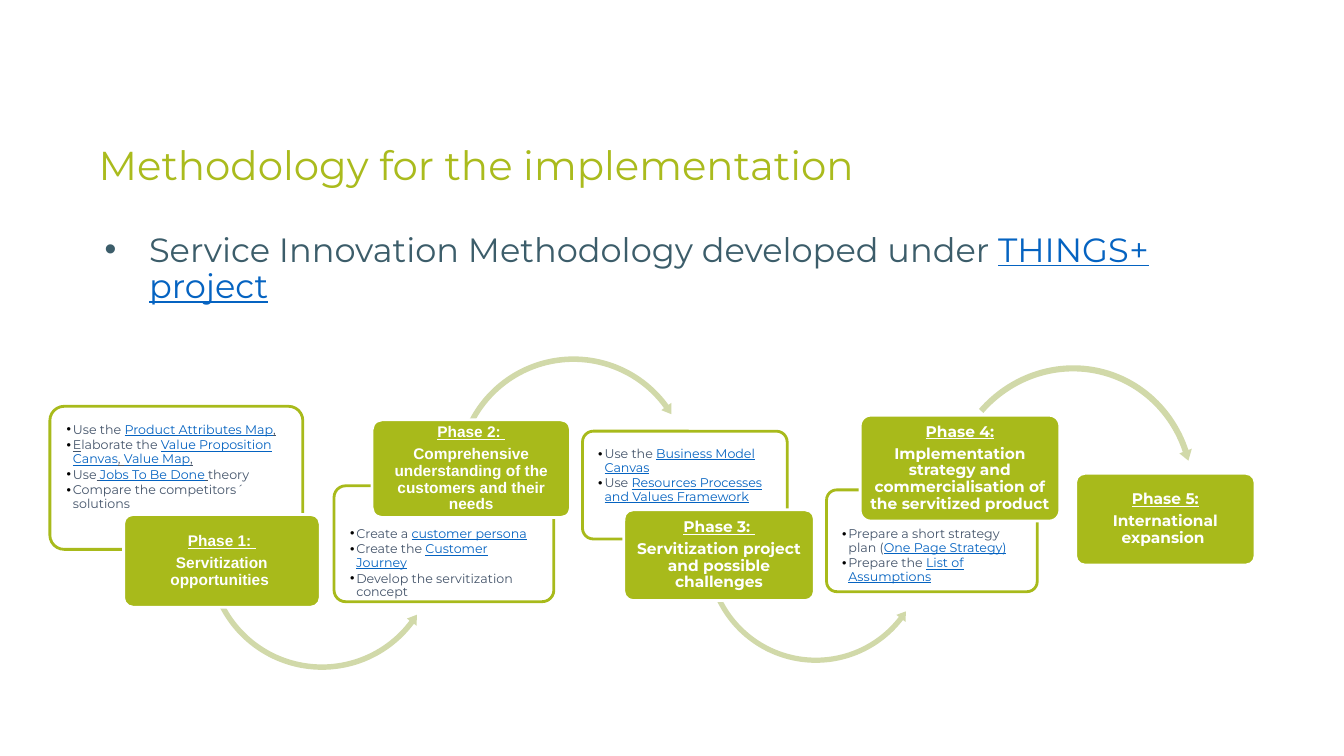
from dataclasses import dataclass
from math import cos, radians, sin, tan

from lxml import etree
from pptx import Presentation
from pptx.dml.color import RGBColor
from pptx.enum.shapes import MSO_SHAPE
from pptx.enum.text import MSO_ANCHOR, PP_ALIGN
from pptx.oxml.ns import qn
from pptx.util import Pt

ROUNDED = MSO_SHAPE.ROUNDED_RECTANGLE
TOP, MIDDLE = MSO_ANCHOR.TOP, MSO_ANCHOR.MIDDLE
LEFT, CENTER = PP_ALIGN.LEFT, PP_ALIGN.CENTER
PLAIN, MARKED, LINK = "plain", "marked", "link"


@dataclass(frozen=True)
class Theme:
    heading_font: str = "Montserrat"
    label_font: str = "Arial"
    title_size: float = 28.8
    body_size: float = 24
    phase_size: float = 11
    task_size: float = 9
    title: RGBColor = RGBColor(0xAA, 0xBB, 0x1D)
    body: RGBColor = RGBColor(0x3C, 0x5D, 0x6A)
    task: RGBColor = RGBColor(0x44, 0x54, 0x6A)
    link: RGBColor = RGBColor(0x05, 0x63, 0xC1)
    phase: RGBColor = RGBColor(0xA8, 0xBA, 0x1B)
    arrow: RGBColor = RGBColor(0xD1, 0xD9, 0xA9)
    white: RGBColor = RGBColor(0xFF, 0xFF, 0xFF)
    black: RGBColor = RGBColor(0, 0, 0)


class MethodologySlide:
    """Draws the elements of the methodology slide in one theme."""

    def __init__(self, slide, theme):
        self.shapes = slide.shapes
        self.theme = theme

    def format_run(self, run, font, size, color, bold=False, underline=False):
        run.font.name = font
        run.font.size = Pt(size)
        run.font.color.rgb = color
        run.font.bold = bold
        run.font.underline = underline

    def set_insets(self, frame, left, top, right, bottom):
        frame.word_wrap = True
        frame.margin_left, frame.margin_top = Pt(left), Pt(top)
        frame.margin_right, frame.margin_bottom = Pt(right), Pt(bottom)

    def bullet(self, paragraph, indent, hanging, color):
        properties = paragraph._p.get_or_add_pPr()
        properties.set("marL", str(Pt(indent)))
        properties.set("indent", str(-Pt(hanging)))
        bullet_color = etree.SubElement(properties, qn("a:buClr"))
        etree.SubElement(bullet_color, qn("a:srgbClr"), val=str(color))
        etree.SubElement(properties, qn("a:buFont"), typeface="Arial")
        etree.SubElement(properties, qn("a:buChar"), char="•")

    def write_parts(self, paragraph, parts, size, color):
        paragraph.line_spacing = 0.9
        for words, kind in parts:
            run = paragraph.add_run()
            run.text = words
            self.format_run(run, self.theme.heading_font, size,
                            self.theme.link if kind == LINK else color,
                            underline=kind != PLAIN)

    def text_block(self, box, parts, size, color, bulleted=False):
        frame = self.shapes.add_textbox(*map(Pt, box)).text_frame
        self.set_insets(frame, 7.2, 3.6, 7.2, 3.6)
        paragraph = frame.paragraphs[0]
        if bulleted:
            self.bullet(paragraph, 36, 31.7, color)
        self.write_parts(paragraph, parts, size, color)

    def card(self, box, fill, border):
        card = self.shapes.add_shape(ROUNDED, *map(Pt, box))
        card.adjustments[0] = 0.1
        card.shadow.inherit = False
        card.fill.solid()
        card.fill.fore_color.rgb = fill
        card.line.color.rgb = border
        card.line.width = Pt(2)
        return card.text_frame

    def task_panel(self, box, top_inset, tasks):
        frame = self.card(box, self.theme.white, self.theme.phase)
        self.set_insets(frame, 9, top_inset, 10, 0)
        frame.vertical_anchor = TOP
        for index, parts in enumerate(tasks):
            paragraph = frame.add_paragraph() if index else frame.paragraphs[0]
            paragraph.alignment = LEFT
            self.bullet(paragraph, 4.5, 4.5, self.theme.black)
            if index:
                paragraph.space_before = Pt(1.4)
            self.write_parts(paragraph, parts, self.theme.task_size, self.theme.task)

    def phase_box(self, box, font, heading, name):
        frame = self.card(box, self.theme.phase, self.theme.white)
        self.set_insets(frame, 1.4, 1.4, 1.4, 1.4)
        frame.vertical_anchor = MIDDLE
        frame.text = f"{heading}\n{name}"
        for index, paragraph in enumerate(frame.paragraphs):
            paragraph.alignment = CENTER
            paragraph.line_spacing = 0.9
            if index:
                paragraph.space_before = Pt(3.9)
            self.format_run(paragraph.runs[0], font, self.theme.phase_size,
                            self.theme.white, bold=True, underline=index == 0)

    def curved_arrow(self, box, start, tip, rotation=0):
        left, top, width, height = map(Pt, box)
        builder = self.shapes.build_freeform(left, top)
        builder.add_line_segments([(left + width, top), (left + width, top + height),
                                   (left, top + height)])
        arrow = builder.convert_to_shape()
        arrow.rotation = rotation
        arrow.shadow.inherit = False
        arrow.fill.solid()
        arrow.fill.fore_color.rgb = self.theme.arrow
        arrow.line.fill.background()
        outline = arrow._element.find(f".//{qn('a:path')}")
        for segment in list(outline):
            outline.remove(segment)

        def draw(command, *points):
            segment = etree.SubElement(outline, qn(f"a:{command}"))
            for x, y in points:
                etree.SubElement(segment, qn("a:pt"), x=str(round(width / 2 * (1 + x))),
                                 y=str(round(height / 2 * (1 + y))))

        def point(angle, radius, lead=0.0):
            turn = radians(angle)
            return (radius * (cos(turn) - lead * sin(turn)),
                    radius * (sin(turn) + lead * cos(turn)))

        def arc(first, last, radius):
            half = (last - first) / 2
            lead = 4 / 3 * tan(radians(half) / 4)
            for begin in (first, first + half):
                end = begin + half
                draw("cubicBezTo", point(begin, radius, lead),
                     point(end, radius, -lead), point(end, radius))

        middle, half_band, half_head = 0.947, 0.023, 0.051
        neck = tip - 4.6 if tip > start else tip + 4.6
        draw("moveTo", point(start, middle + half_band))
        draw("lnTo", point(start, middle - half_band))
        arc(start, neck, middle - half_band)
        for angle, radius in ((neck, middle - half_head), (tip, middle),
                              (neck, middle + half_head), (neck, middle + half_band)):
            draw("lnTo", point(angle, radius))
        arc(neck, start, middle + half_band)
        draw("close")


THEME = Theme()

PANELS = [
    ((35.6, 290.2, 180.7, 102.2), 9.3, [
        [("Use the ", PLAIN), ("Product Attributes Map", LINK), (",", MARKED)],
        [("E", MARKED), ("laborate the ", PLAIN), ("Value Proposition Canvas", LINK),
         (", ", MARKED), ("Value Map", LINK), (",", MARKED)],
        [("Use", PLAIN), (" ", MARKED), ("Jobs To Be Done", LINK), (" ", MARKED),
         ("theory", PLAIN)],
        [("Compare the competitors´ solutions", PLAIN)]]),
    ((238.6, 347, 157, 82.8), 27.3, [
        [("Create a ", PLAIN), ("customer persona", LINK)],
        [("Create the ", PLAIN), ("Customer Journey", LINK)],
        [("Develop the servitization concept", PLAIN)]]),
    ((416.1, 308, 146.2, 77), 9.5, [
        [("Use the ", PLAIN), ("Business Model Canvas", LINK)],
        [("Use ", PLAIN), ("Resources Processes and Values Framework", LINK)]]),
    ((590.4, 349.9, 150.5, 72.7), 24.8, [
        [("Prepare a short strategy plan (", PLAIN), ("One Page Strategy)", LINK)],
        [("Prepare the ", PLAIN), ("List of Assumptions", LINK)]]),
]

ARROWS = [
    ((145.4, 311.8, 169.2, 169.2), 152.6, 32.2),
    ((323.3, 252, 172.8, 172.8), 207.7, 328.7),
    ((501.8, 313.9, 162, 162), 153.8, 33),
    ((673.2, 257.8, 182.9, 190.8), 206.1, 329.1, 16),
]

PHASES = [
    ((88.3, 367.5, 140.4, 66.2), THEME.label_font, "Phase 1: ",
     "Servitization opportunities "),
    ((265.8, 299.9, 141.8, 69.8), THEME.label_font, "Phase 2: ",
     "Comprehensive understanding of the customers and their needs"),
    ((445.6, 364.2, 136.1, 64.8), THEME.heading_font, "Phase 3: ",
     "Servitization project and possible challenges"),
    ((614.4, 296.6, 142.6, 75.6), THEME.heading_font, "Phase 4:",
     "Implementation strategy and commercialisation of the servitized product"),
    ((768.3, 338.1, 128.2, 65.5), THEME.heading_font, "Phase 5:",
     "International expansion "),
]


def main():
    presentation = Presentation()
    presentation.slide_width, presentation.slide_height = Pt(960), Pt(540)
    slide = presentation.slides.add_slide(presentation.slide_layouts[6])
    methodology = MethodologySlide(slide, THEME)
    methodology.text_block((63.4, 100.5, 797.8, 41),
                           [("Methodology for the implementation", PLAIN)],
                           THEME.title_size, THEME.title)
    methodology.text_block((63.4, 163, 797.8, 276.5),
                           [("Service Innovation Methodology developed under ", PLAIN),
                            ("THINGS+ project", LINK)],
                           THEME.body_size, THEME.body, bulleted=True)
    for panel, arrow, phase in zip(PANELS, ARROWS, PHASES):
        methodology.task_panel(*panel)
        methodology.curved_arrow(*arrow)
        methodology.phase_box(*phase)
    methodology.phase_box(*PHASES[-1])
    presentation.save("out.pptx")


if __name__ == "__main__":
    main()
